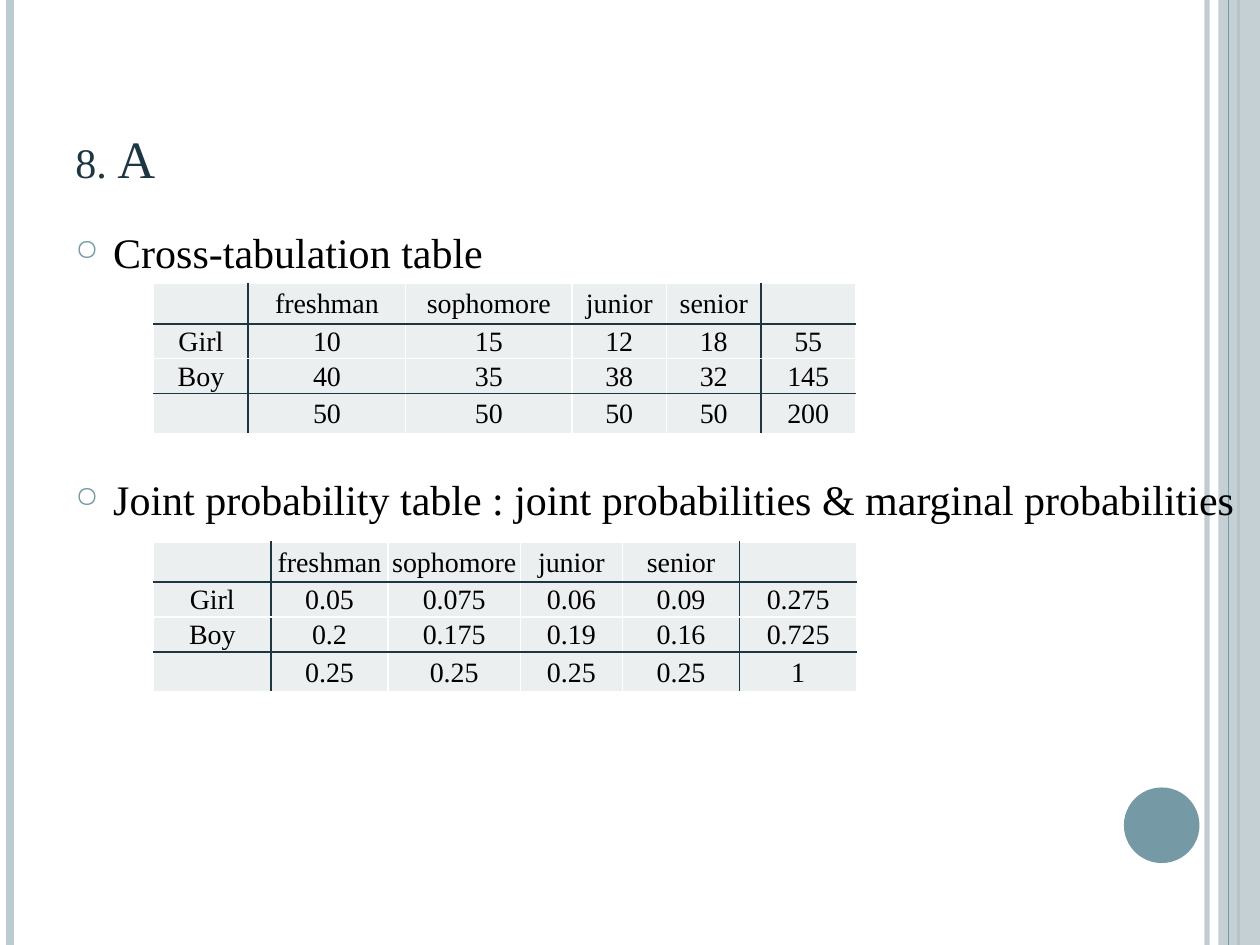
"""Build a slide with a cross-tabulation table and its joint probability table."""
from lxml import etree
from pptx import Presentation
from pptx.dml.color import RGBColor
from pptx.enum.shapes import MSO_CONNECTOR, MSO_SHAPE
from pptx.enum.text import MSO_ANCHOR, PP_ALIGN
from pptx.oxml.ns import qn
from pptx.util import Inches, Pt

LINE = MSO_CONNECTOR.STRAIGHT
RECT, OVAL = MSO_SHAPE.RECTANGLE, MSO_SHAPE.OVAL
MIDDLE, BOTTOM = MSO_ANCHOR.MIDDLE, MSO_ANCHOR.BOTTOM
CENTER = PP_ALIGN.CENTER

WIDE, HIGH = 10, 7.5
FACE = "Times New Roman"
PALE, TEAL, NAVY = "BDCACF", "759AA5", "1D3641"
CELL, WHITE, BLACK = "ECEFF0", "FFFFFF", "000000"

TITLE = "8. A"
POINTS = [
    ("Cross-tabulation table", 6),
    ("Joint probability table : joint probabilities & marginal probabilities", 112),
]
HEAD = ["", "freshman", "sophomore", "junior", "senior", ""]
COUNTS = [
    HEAD,
    ["Girl", "10", "15", "12", "18", "55"],
    ["Boy", "40", "35", "38", "32", "145"],
    ["", "50", "50", "50", "50", "200"],
]
SHARES = [
    HEAD,
    ["Girl", "0.05", "0.075", "0.06", "0.09", "0.275"],
    ["Boy", "0.2", "0.175", "0.19", "0.16", "0.725"],
    ["", "0.25", "0.25", "0.25", "0.25", "1"],
]
TABLES = [
    (2.25, [0.75, 1.25, 1.32, 0.75, 0.75, 0.75], COUNTS),
    (4.3, [0.93, 0.93, 1.05, 0.81, 0.93, 0.93], SHARES),
]
ROWS = [0.32, 0.26, 0.26, 0.32]
DARK_COLS, DARK_ROWS = (1, 5), (1, 3)
BACK = [(9.58, PALE, 3, 93), (0.08, PALE, 4.5, 100), (9.83, TEAL, 1.5, 100)]
FRONT = [(9.75, TEAL, 0.75, 100)]


def rgb(code):
    """Turn a hex string into a colour."""
    return RGBColor.from_string(code)


def sub(node, tag, **attrs):
    """Append a drawing element to a node."""
    child = etree.SubElement(node, qn("a:" + tag))
    for key, value in attrs.items():
        child.set(key, str(value))
    return child


def fade(shape, share):
    """Set the opacity of a shape's first colour."""
    color = next(shape._element.spPr.iter(qn("a:srgbClr")))
    sub(color, "alpha", val=share * 1000)


def style(para, size, color):
    """Set the font of a paragraph."""
    font = para.font
    font.name, font.size = FACE, Pt(size)
    font.color.rgb = rgb(color)


def stripe(slide, x, color, width, share):
    """Draw a line down the whole slide."""
    line = slide.shapes.add_connector(LINE, Inches(x), 0, Inches(x), Inches(HIGH))
    line.line.color.rgb = rgb(color)
    line.line.width = Pt(width)
    if share < 100:
        fade(line, share)
    sub(line._element.spPr, "effectLst")


def solid(slide, kind, box, color):
    """Draw a filled shape without outline."""
    shape = slide.shapes.add_shape(kind, *map(Inches, box))
    shape.shadow.inherit = False
    shape.fill.solid()
    shape.fill.fore_color.rgb = rgb(color)
    shape.line.fill.background()
    return shape


def frame(slide, *box):
    """Add a wrapping text box and return its frame."""
    text = slide.shapes.add_textbox(*map(Inches, box)).text_frame
    text.word_wrap = True
    return text


def bullet(para, text, gap):
    """Write a paragraph with a ring bullet."""
    para.text = text
    para.space_before = Pt(gap)
    props = para._p.get_or_add_pPr()
    props.set("marL", str(Inches(0.3)))
    props.set("indent", str(-Inches(0.3)))
    sub(sub(props, "buClr"), "srgbClr", val=TEAL)
    sub(props, "buSzPct", val=70000)
    sub(props, "buChar", char="○")
    style(para, 24, BLACK)


def borders(cell, row, col):
    """Rule a cell, dark beside the margins of the table."""
    props = cell._tc.get_or_add_tcPr()
    edges = [
        ("lnL", col in DARK_COLS),
        ("lnR", col + 1 in DARK_COLS),
        ("lnT", row in DARK_ROWS),
        ("lnB", row + 1 in DARK_ROWS),
    ]
    for spot, (tag, dark) in enumerate(edges):
        edge = sub(props, tag, w=Pt(1))
        sub(sub(edge, "solidFill"), "srgbClr", val=NAVY if dark else WHITE)
        props.insert(spot, edge)


def grid(slide, top, cols, data):
    """Add a ruled table."""
    box = (1.22, top, sum(cols), sum(ROWS))
    table = slide.shapes.add_table(len(ROWS), len(cols), *map(Inches, box)).table
    table.first_row = table.horz_banding = False
    for col, width in zip(table.columns, cols):
        col.width = Inches(width)
    for row, height in zip(table.rows, ROWS):
        row.height = Inches(height)
    for r, line in enumerate(data):
        for c, text in enumerate(line):
            cell = table.cell(r, c)
            cell.text = text
            cell.vertical_anchor = MIDDLE
            cell.margin_left = cell.margin_right = cell.margin_top = Inches(0.01)
            cell.margin_bottom = 0
            cell.fill.solid()
            cell.fill.fore_color.rgb = rgb(CELL)
            para = cell.text_frame.paragraphs[0]
            para.alignment = CENTER
            style(para, 16, BLACK)
            borders(cell, r, c)


def main():
    """Build and save the slide."""
    deck = Presentation()
    deck.slide_width, deck.slide_height = Inches(WIDE), Inches(HIGH)
    slide = deck.slides.add_slide(deck.slide_layouts[6])
    for item in BACK:
        stripe(slide, *item)
    fade(solid(slide, RECT, (9.67, 0, 0.33, HIGH), PALE), 87)
    for item in FRONT:
        stripe(slide, *item)
    solid(slide, OVAL, (8.92, 6.25, 0.6, 0.6), TEAL)

    title = frame(slide, 0.5, 0.3, 8.17, 1.25)
    title.vertical_anchor = BOTTOM
    para = title.paragraphs[0]
    para.text = TITLE
    style(para, 30, NAVY)
    para.runs[0]._r.get_or_add_rPr().set("cap", "small")

    body = frame(slide, 0.5, 1.75, 9.59, 5.33)
    for i, (text, gap) in enumerate(POINTS):
        bullet(body.add_paragraph() if i else body.paragraphs[0], text, gap)
    for item in TABLES:
        grid(slide, *item)
    deck.save("out.pptx")


if __name__ == "__main__":
    main()
